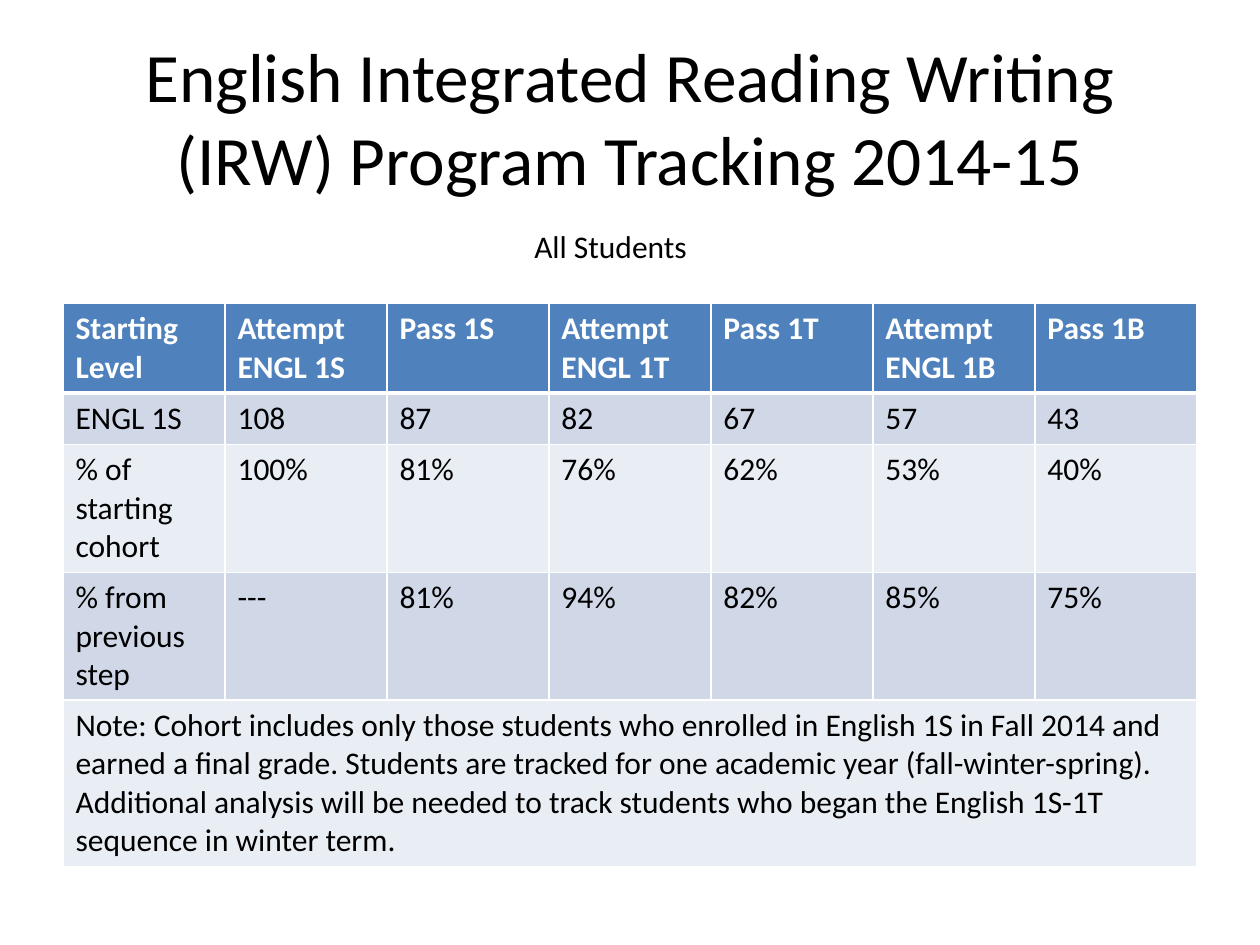
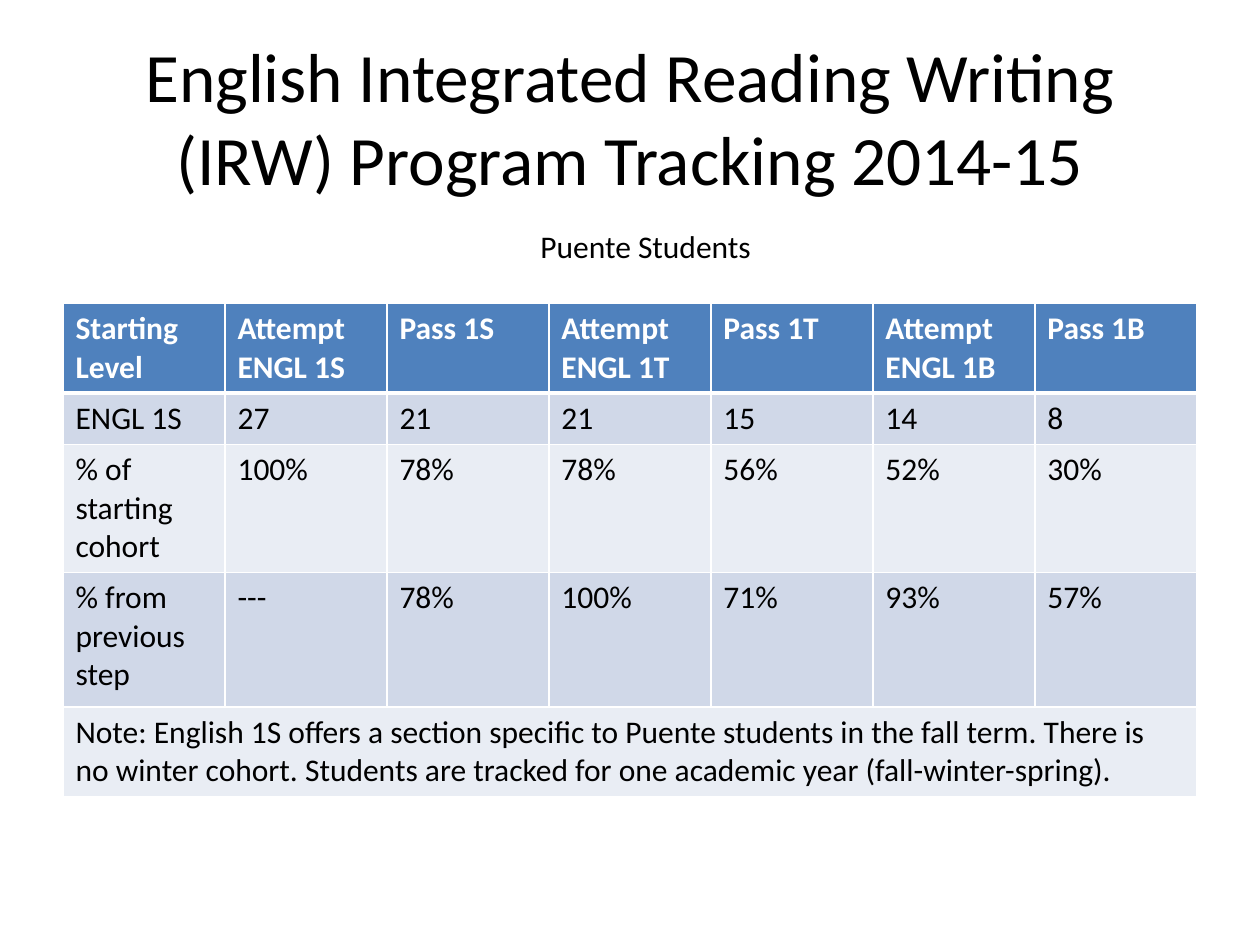
from lxml.etree import SubElement
from pptx import Presentation
from pptx.dml.color import RGBColor
from pptx.enum.text import MSO_ANCHOR, MSO_AUTO_SIZE, PP_ALIGN
from pptx.oxml.ns import qn
from pptx.util import Inches, Pt

SLIDE_WIDTH, SLIDE_HEIGHT = Inches(10), Inches(7.5)
UNIT = SLIDE_WIDTH / 120
FONT = "Calibri"
BLACK, WHITE, HEADER_BLUE = "000000", "FFFFFF", "4F81BD"
BANDS = ("E9EDF4", "D0D8E8")

TITLE = "English Integrated Reading Writing (IRW) Program Tracking 2014-15"
STEPS = ["Starting Level", "Attempt ENGL 1S", "Pass 1S", "Attempt ENGL 1T",
         "Pass 1T", "Attempt ENGL 1B", "Pass 1B"]
MEASURES = ["ENGL 1S", "% of starting cohort", "% from previous step"]
LINE_ROW = 4.87

COHORTS = [
    {
        "group": "All Students ",
        "group_column": 35,
        "results": [
            ["108", "87", "82", "67", "57", "43"],
            ["100%", "81%", "76%", "62%", "53%", "40%"],
            ["---", "81%", "94%", "82%", "85%", "75%"],
        ],
        "note": "Note: Cohort includes only those students who enrolled in "
                "English 1S in Fall 2014 and earned a final grade. Students are "
                "tracked for one academic year (fall-winter-spring). Additional "
                "analysis will be needed to track students who began the "
                "English 1S-1T sequence in winter term.",
        "last_step_row": LINE_ROW,
        "table_rows": 52.9,
    },
    {
        "group": "Puente Students",
        "group_column": 38,
        "results": [
            ["27", "21", "21", "15", "14", "8"],
            ["100%", "78%", "78%", "56%", "52%", "30%"],
            ["---", "78%", "100%", "71%", "93%", "57%"],
        ],
        "note": "Note: English 1S offers a section specific to Puente students "
                "in the fall term. There is no winter cohort. Students are "
                "tracked for one academic year (fall-winter-spring).",
        "last_step_row": 12.84,
        "table_rows": 46.6,
    },
]


def color(hex_value):
    """Turn a hex string into a colour."""
    return RGBColor.from_string(hex_value)


def grid(*units):
    """Turn grid units, 120 across the slide, into lengths."""
    return [round(unit * UNIT) for unit in units]


def write(frame, text, size=18, ink=BLACK, bold=False, align=PP_ALIGN.LEFT):
    """Put one formatted paragraph into a text frame."""
    paragraph = frame.paragraphs[0]
    paragraph.alignment = align
    run = paragraph.add_run()
    run.text = text
    run.font.name = FONT
    run.font.size = Pt(size)
    run.font.bold = bold
    run.font.color.rgb = color(ink)


def add_title(slide):
    """Place and fill the title shared by the slides."""
    title = slide.shapes.title
    title.left, title.top, title.width, title.height = grid(6, 3.6, 108, 15)
    frame = title.text_frame
    frame.auto_size = MSO_AUTO_SIZE.NONE
    frame.vertical_anchor = MSO_ANCHOR.MIDDLE
    write(frame, TITLE, size=39.6, align=PP_ALIGN.CENTER)


def add_group_label(slide, group, column):
    """Name the student group above the table."""
    frame = slide.shapes.add_textbox(*grid(column, 21, 47, 5)).text_frame
    frame.word_wrap = True
    frame.auto_size = MSO_AUTO_SIZE.SHAPE_TO_FIT_TEXT
    write(frame, group, align=PP_ALIGN.CENTER)


def add_borders(cell, **widths):
    """Draw white cell borders with the given widths in points."""
    properties = cell._tc.get_or_add_tcPr()
    for side in "LRTB":
        line = SubElement(properties, qn(f"a:ln{side}"), w=str(Pt(widths.get(side, 1))))
        fill = SubElement(line, qn("a:solidFill"))
        SubElement(fill, qn("a:srgbClr"), val=WHITE)


def style_cell(cell, row):
    """Give a cell its borders and the fill of its row."""
    add_borders(cell, **{0: {"B": 3}, 1: {"T": 3}}.get(row, {}))
    cell.fill.solid()
    cell.fill.fore_color.rgb = color(BANDS[row % 2] if row else HEADER_BLUE)


def add_tracking_table(slide, cohort):
    """Build the table of steps, results and a note across the last row."""
    results = [[measure, *values] for measure, values in zip(MEASURES, cohort["results"])]
    rows = [STEPS, *results, [cohort["note"]]]
    holder = slide.shapes.add_table(
        len(rows), len(STEPS), *grid(6, 28.92, 108, cohort["table_rows"]))
    table = holder.table
    heights = grid(*[LINE_ROW] * 3, cohort["last_step_row"], LINE_ROW)
    for row, (texts, height) in enumerate(zip(rows, heights)):
        table.rows[row].height = height
        for cell in table.rows[row].cells:
            style_cell(cell, row)
        for column, text in enumerate(texts):
            write(table.cell(row, column).text_frame, text,
                  ink=BLACK if row else WHITE, bold=row == 0)
    note_row = len(rows) - 1
    table.cell(note_row, 0).merge(table.cell(note_row, len(STEPS) - 1))
    holder.height = grid(cohort["table_rows"])[0]


def main():
    """Build one tracking slide per cohort."""
    deck = Presentation()
    deck.slide_width, deck.slide_height = SLIDE_WIDTH, SLIDE_HEIGHT
    title_only = deck.slide_layouts.get_by_name("Title Only")
    for cohort in COHORTS:
        slide = deck.slides.add_slide(title_only)
        add_title(slide)
        add_tracking_table(slide, cohort)
        add_group_label(slide, cohort["group"], cohort["group_column"])
    deck.save("out.pptx")


if __name__ == "__main__":
    main()
